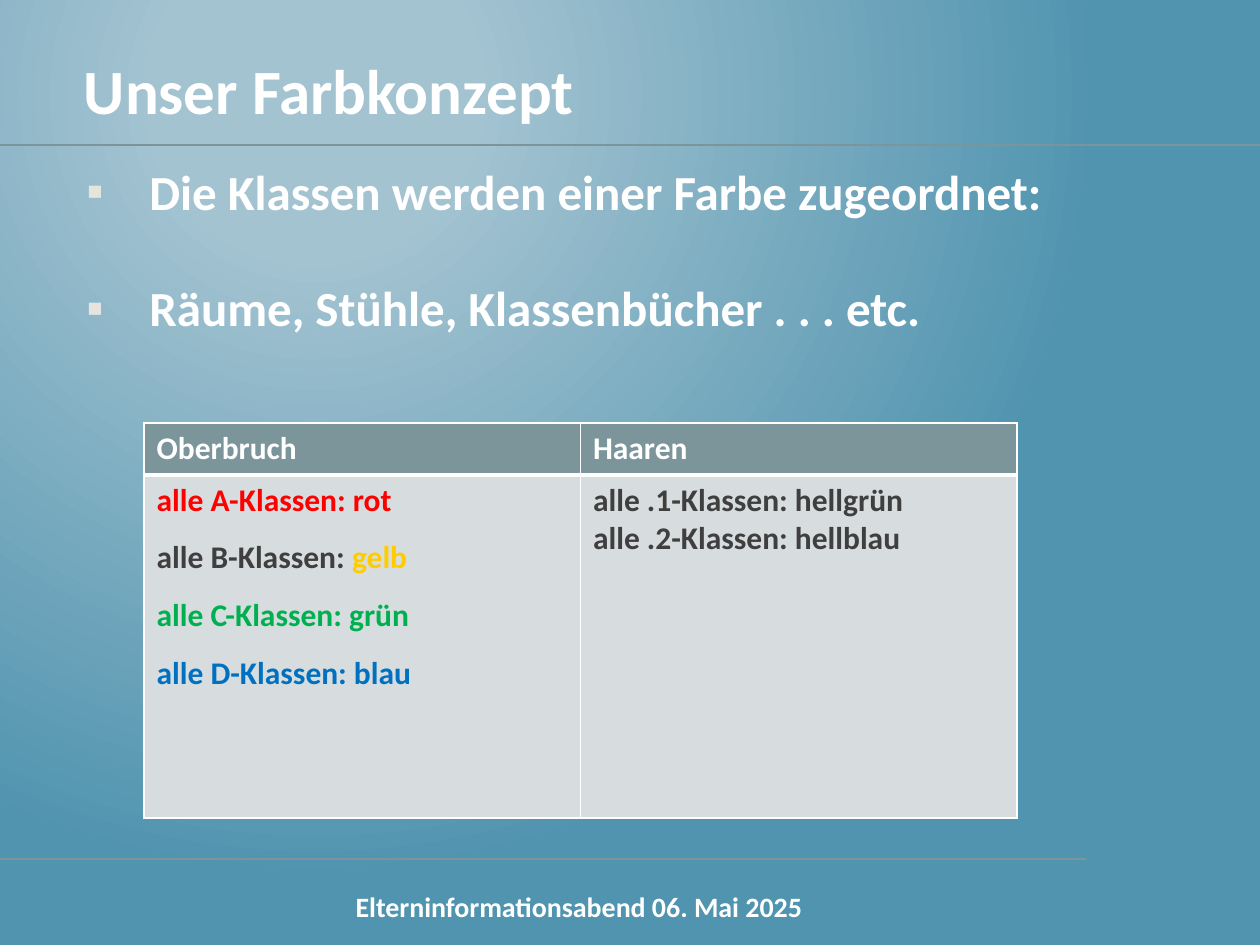
from lxml import etree
from pptx import Presentation
from pptx import util as u
from pptx.dml.color import RGBColor
from pptx.enum import shapes, text
from pptx.oxml import parse_xml
from pptx.oxml.ns import qn

NS = 'xmlns:a="http://schemas.openxmlformats.org/drawingml/2006/main"'
HUE = {
    "light": "A3C3D1", "deep": "5194AF", "white": "FFFFFF", "slate": "7C959A",
    "bullet": "E5E4DF", "pale": "D7DDDE", "dark": "3F3F3F", "red": "FF0000",
    "gold": "FFCC00", "green": "00B050", "blue": "0070C0",
}
HEADS = ["Oberbruch", "Haaren"]
LISTS = [
    [[("alle A-Klassen: rot", "red")],
     [("alle B-Klassen: ", "dark"), ("gelb", "gold")],
     [("alle C-Klassen: grün", "green")],
     [("alle D-Klassen: blau", "blue")]],
    [[("alle .1-Klassen: hellgrün", "dark")],
     [("alle .2-Klassen: hellblau", "dark")]],
]


def px(n):
    """Turn pixels into EMU."""
    return u.Emu(round(n * 914400 / 126))


def rgb(hue):
    """Look up a colour by name."""
    return RGBColor.from_string(HUE[hue])


def style(para, size, hue="white"):
    """Set the font of a paragraph."""
    font = para.font
    font.name, font.size, font.bold = "Calibri", u.Pt(size), True
    font.color.rgb = rgb(hue)


def write(slide, box, lines, size):
    """Add a text box with one paragraph for each line."""
    frame = slide.shapes.add_textbox(*map(px, box)).text_frame
    frame.word_wrap = True
    frame.text = "\n".join(lines)
    for para in frame.paragraphs:
        style(para, size)
    return frame


def rule(slide, y, width, weight):
    """Draw a level line from the left edge."""
    line = slide.shapes.add_connector(
        shapes.MSO_CONNECTOR.STRAIGHT, 0, px(y), px(width), px(y))
    line.line.color.rgb = rgb("slate")
    line.line.width = u.Pt(weight)
    etree.SubElement(line._element.spPr, qn("a:effectLst"))


def backdrop(slide):
    """Fill the background with a round gradient."""
    fill = slide.background.fill
    fill.gradient()
    old = slide._element.find(".//" + qn("a:gradFill"))
    stops = "".join(
        f'<a:gs pos="{pos}"><a:srgbClr val="{HUE[hue]}"/></a:gs>'
        for pos, hue in ((20000, "light"), (100000, "deep")))
    new = parse_xml(
        f'<a:gradFill {NS} rotWithShape="1"><a:gsLst>{stops}</a:gsLst>'
        '<a:path path="circle"><a:fillToRect l="50000" t="20000" '
        'r="100000" b="100000"/></a:path></a:gradFill>')
    old.getparent().replace(old, new)


def title(slide, box):
    """Place the heading and the rule below it."""
    frame = write(slide, box, ["Unser Farbkonzept"], 36)
    frame.margin_left = frame.margin_right = 0
    rule(slide, 145, 1260, 0.75)


def points(slide, box):
    """Place the bulleted list."""
    lines = ["Die Klassen werden einer Farbe zugeordnet:",
             "Räume, Stühle, Klassenbücher . . . etc."]
    frame = write(slide, box, lines, 28)
    for i, para in enumerate(frame.paragraphs):
        if i:
            para.space_before = u.Pt(33)
        props = para._p.get_or_add_pPr()
        props.set("marL", str(px(63)))
        props.set("indent", str(-px(63)))
        marks = (f'<a:buClr {NS}><a:srgbClr val="{HUE["bullet"]}"/></a:buClr>',
                 f'<a:buFont {NS} typeface="Arial"/>',
                 f'<a:buChar {NS} char="▪"/>')
        spot = props.find(qn("a:defRPr"))
        for mark in marks:
            spot.addprevious(parse_xml(mark))


def paint(cell, hue, edges):
    """Set the borders and the fill of a cell."""
    props = cell._tc.get_or_add_tcPr()
    for side, weight in zip("LRTB", edges):
        props.append(parse_xml(
            f'<a:ln{side} {NS} w="{u.Pt(weight)}"><a:solidFill>'
            f'<a:srgbClr val="{HUE["white"]}"/></a:solidFill></a:ln{side}>'))
    cell.fill.solid()
    cell.fill.fore_color.rgb = rgb(hue)


def classes(slide, box):
    """Place the table of class colours."""
    x, y, w, h = box
    table = slide.shapes.add_table(2, 2, px(x), px(y), px(w), px(h)).table
    table.rows[0].height, table.rows[1].height = px(52), px(h - 52)
    for col, (head, items) in enumerate(zip(HEADS, LISTS)):
        top, body = table.cell(0, col), table.cell(1, col)
        paint(top, "slate", (1, 1, 1, 3))
        paint(body, "pale", (1, 1, 3, 1))
        top.text = head
        style(top.text_frame.paragraphs[0], 18)
        frame = body.text_frame
        for i, parts in enumerate(items):
            para = frame.add_paragraph() if i else frame.paragraphs[0]
            style(para, 18, parts[0][1])
            if i and col == 0:
                para.line_spacing = 1.5
            for words, hue in parts:
                run = para.add_run()
                run.text = words
                run.font.color.rgb = rgb(hue)


def footer(slide, box):
    """Place the closing line and the rule above it."""
    rule(slide, 859, 1086, 1.5)
    frame = write(slide, box, ["Elterninformationsabend 06. Mai 2025"], 16)
    frame.paragraphs[0].alignment = text.PP_ALIGN.CENTER


def main():
    """Build the slide and save it."""
    deck = Presentation()
    deck.slide_width, deck.slide_height = px(1260), px(945)
    slide = deck.slides.add_slide(deck.slide_layouts[6])
    backdrop(slide)
    footer(slide, (123, 883, 912, 81))
    title(slide, (84, 45, 1071, 203))
    points(slide, (74, 155, 1131, 645))
    classes(slide, (144, 423, 873, 395))
    deck.save("out.pptx")


if __name__ == "__main__":
    main()
